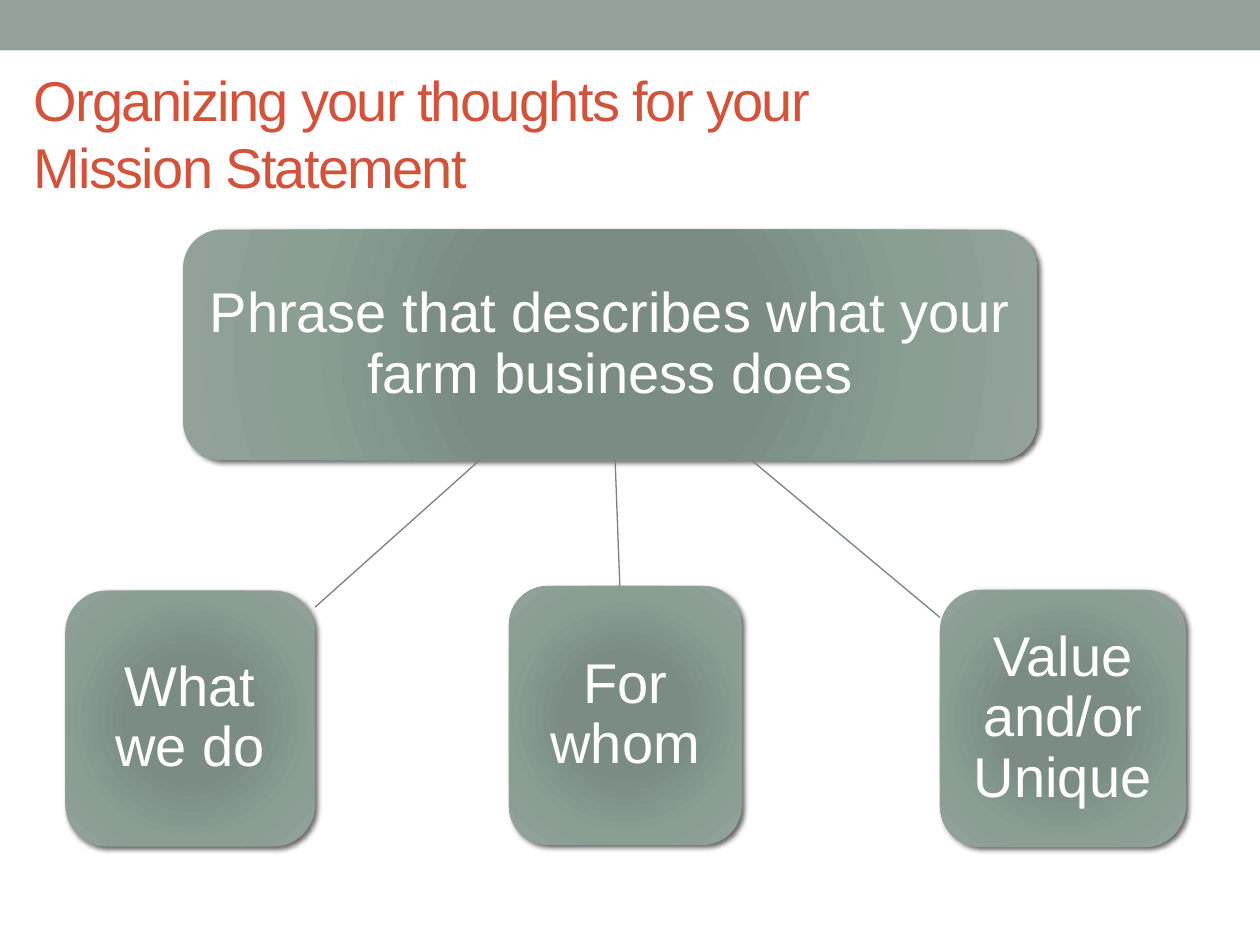
"""Build a slide with one mission phrase and the three parts it joins."""
from typing import Any, NamedTuple

from lxml.etree import SubElement
from pptx import Presentation
from pptx.dml.color import RGBColor
from pptx.enum.shapes import MSO_CONNECTOR as Link, MSO_SHAPE as Kind
from pptx.enum.text import MSO_ANCHOR as Anchor, PP_ALIGN as Align
from pptx.oxml import parse_xml
from pptx.oxml.ns import qn
from pptx.util import Pt

NS = 'xmlns:a="http://schemas.openxmlformats.org/drawingml/2006/main"'
STOPS = ((0, "7B8E82"), (34, "7B8D83"), (70, "8A9E92"), (100, "93A299"))


class Box(NamedTuple):
    text: str
    left: float
    top: float
    width: float
    height: float


class Line(NamedTuple):
    x1: float
    y1: float
    x2: float
    y2: float


ROOT = Box("Phrase that describes what your farm business does", 104.6, 131.2, 488.2, 131.8)
PARTS = (
    (Line(351.5, 263, 354.2, 334.8), Box("For whom", 290.8, 334.8, 133, 148)),
    (Line(429.5, 263, 537.1, 352.8), Box("Value and/or Unique", 537.1, 337.1, 140.4, 147)),
    (Line(274, 263, 180, 347), Box("What we do", 37.4, 337.5, 142.6, 146.2)),
)


def rgb(code: str) -> RGBColor:
    return RGBColor.from_string(code)


def write(shape: Any, text: str, *, color: str, size: float = 32,
          align: Any = Align.LEFT, pad: tuple = (7.2, 3.6),
          lead: float = 1.0, track: float = 0) -> None:
    frame = shape.text_frame
    frame.word_wrap = True
    frame.vertical_anchor = Anchor.MIDDLE
    frame.margin_left = frame.margin_right = Pt(pad[0])
    frame.margin_top = frame.margin_bottom = Pt(pad[1])
    frame.text = text
    para = frame.paragraphs[0]
    para.alignment = align
    para.line_spacing = lead
    for run in para.runs:
        run.font.name = "Arial"
        run.font.size = Pt(size)
        run.font.color.rgb = rgb(color)
        if track:
            run.font._element.set("spc", str(int(track * 100)))


def shade(shape: Any) -> None:
    stops = "".join(
        f'<a:gs pos="{pos * 1000}"><a:srgbClr val="{code}"/></a:gs>' for pos, code in STOPS)
    shape.line.fill.background()
    props = shape._element.spPr
    props.find(qn("a:ln")).addprevious(parse_xml(
        f'<a:gradFill {NS} rotWithShape="1"><a:gsLst>{stops}</a:gsLst><a:path path="circle">'
        '<a:fillToRect l="100000" t="100000" r="100000" b="100000"/></a:path></a:gradFill>'))
    shape.shadow.inherit = False
    props.find(qn("a:effectLst")).append(parse_xml(
        f'<a:outerShdw {NS} blurRad="{Pt(3)}" dist="{Pt(2)}" dir="{45 * 60000}" '
        'algn="tl" rotWithShape="0"><a:srgbClr val="000000"><a:alpha val="60000"/>'
        '</a:srgbClr></a:outerShdw>'))


def draw_box(shapes: Any, box: Box) -> None:
    shape = shapes.add_shape(Kind.ROUNDED_RECTANGLE, *map(Pt, box[1:]))
    shade(shape)
    write(shape, box.text, color="FFFFFF", align=Align.CENTER, pad=(6.6, 6.6), lead=0.9)


def draw_line(shapes: Any, line: Line) -> None:
    link = shapes.add_connector(Link.STRAIGHT, *map(Pt, line))
    link.line.color.rgb = rgb("76827B")
    link.line.width = Pt(0.75)
    SubElement(link._element.spPr, qn("a:effectLst"))


def main() -> None:
    deck = Presentation()
    deck.slide_width, deck.slide_height = Pt(720), Pt(540)
    shapes = deck.slides.add_slide(deck.slide_layouts[6]).shapes

    band = shapes.add_shape(Kind.RECTANGLE, 0, 0, Pt(720), Pt(28.8))
    band.shadow.inherit = False
    band.fill.solid()
    band.fill.fore_color.rgb = rgb("93A299")
    band.line.fill.background()

    title = shapes.add_textbox(Pt(12.2), Pt(25.2), Pt(682.6), Pt(100.8))
    write(title, "Organizing your thoughts for your \vMission Statement",
          color="D2533C", track=-1)

    draw_box(shapes, ROOT)
    for line, box in PARTS:
        draw_line(shapes, line)
        draw_box(shapes, box)
    deck.save("out.pptx")


if __name__ == "__main__":
    main()
